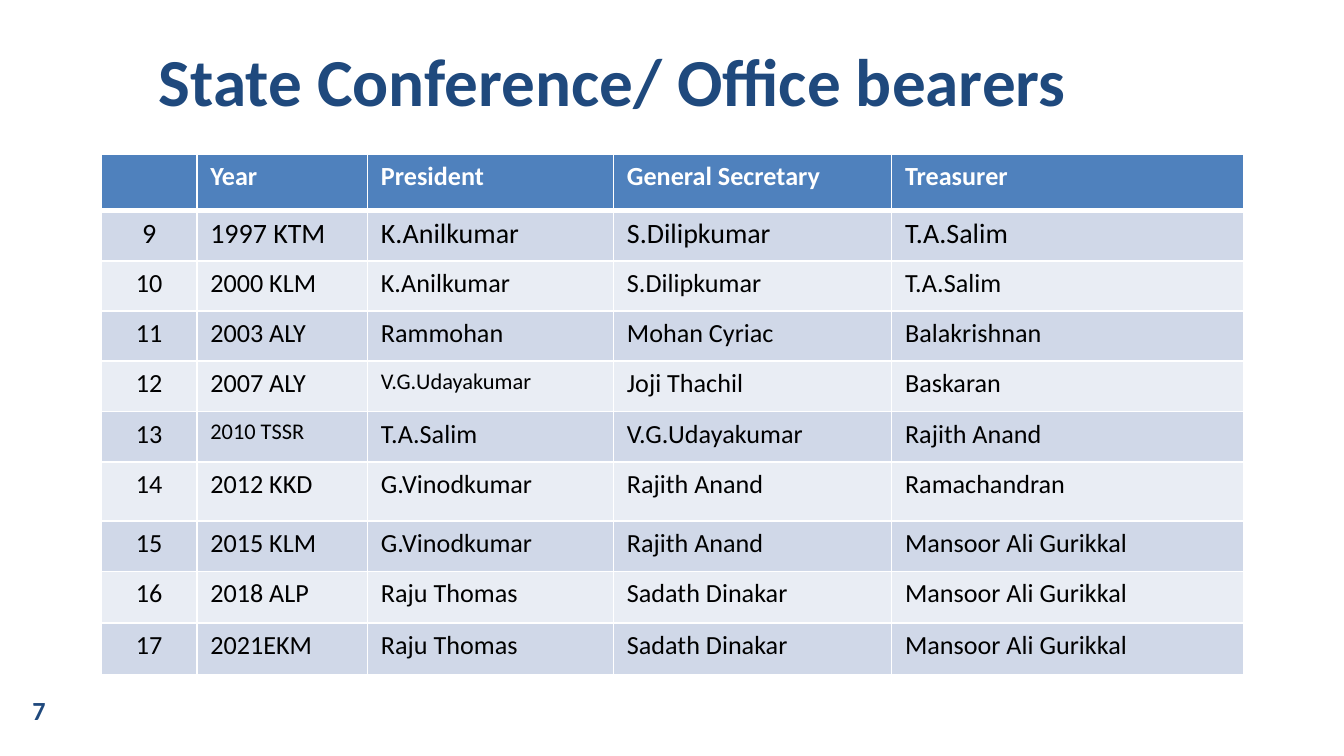
import pptx
import pptx.util
import pptx.dml.color
import pptx.enum.text
import pptx.oxml.ns
import lxml.etree

Pt = pptx.util.Pt
RGB = pptx.dml.color.RGBColor
ALIGN = pptx.enum.text.PP_ALIGN
MIDDLE = pptx.enum.text.MSO_ANCHOR.MIDDLE

NAVY = RGB(0x1F, 0x49, 0x7D)
BLUE = RGB(0x4F, 0x81, 0xBD)
BANDS = [RGB(0xD0, 0xD8, 0xE8), RGB(0xE9, 0xED, 0xF4)]
WHITE = RGB(0xFF, 0xFF, 0xFF)
BLACK = RGB(0, 0, 0)

TITLE = "State Conference/ Office bearers"
NUMBER = "7"
HEADS = ["", "Year", "President", "General Secretary", "Treasurer"]
FIRST = 9
TERMS = [
    ("1997 KTM", "K.Anilkumar", "S.Dilipkumar", "T.A.Salim"),
    ("2000 KLM", "K.Anilkumar", "S.Dilipkumar", "T.A.Salim"),
    ("2003 ALY", "Rammohan", "Mohan Cyriac", "Balakrishnan"),
    ("2007 ALY", "V.G.Udayakumar", "Joji Thachil", "Baskaran"),
    ("2010 TSSR", "T.A.Salim", "V.G.Udayakumar", "Rajith Anand"),
    ("2012 KKD", "G.Vinodkumar", "Rajith Anand", "Ramachandran"),
    ("2015 KLM", "G.Vinodkumar", "Rajith Anand", "Mansoor Ali Gurikkal"),
    ("2018 ALP", "Raju Thomas", "Sadath Dinakar", "Mansoor Ali Gurikkal"),
    ("2021EKM", "Raju Thomas", "Sadath Dinakar", "Mansoor Ali Gurikkal"),
]
SMALL = {(4, 2), (5, 1)}
WIDTHS = [51.1, 91.4, 131.8, 149, 188.7]
HEIGHTS = [30.2, 27.2, 26.8, 26.8, 27, 27, 31.6, 27, 27.8, 27.4]


def write(frame, text, size=14, color=BLACK, bold=False, align=ALIGN.LEFT):
    para = frame.paragraphs[0]
    para.alignment = align
    run = para.add_run()
    run.text = text
    run.font.name = "Calibri"
    run.font.size = Pt(size)
    run.font.bold = bold
    run.font.color.rgb = color


def add_box(slide, text, left, top, width, height, **style):
    box = slide.shapes.add_textbox(Pt(left), Pt(top), Pt(width), Pt(height))
    frame = box.text_frame
    frame.word_wrap = True
    frame.vertical_anchor = MIDDLE
    write(frame, text, color=NAVY, bold=True, **style)


def add_edges(cell, row):
    props = cell._tc.get_or_add_tcPr()
    thick = {"T": 3 if row == 1 else 1, "B": 3 if row == 0 else 1}
    for side in "LRTB":
        name = pptx.oxml.ns.qn("a:ln" + side)
        width = str(Pt(thick.get(side, 1)))
        line = lxml.etree.SubElement(props, name, w=width)
        fill = lxml.etree.SubElement(line, pptx.oxml.ns.qn("a:solidFill"))
        lxml.etree.SubElement(fill, pptx.oxml.ns.qn("a:srgbClr"), val=str(WHITE))


def add_grid(slide):
    rows = [HEADS] + [(str(n), *term) for n, term in enumerate(TERMS, FIRST)]
    grid = slide.shapes.add_table(
        len(rows), len(HEADS), Pt(54.4), Pt(82.6), Pt(sum(WIDTHS)), Pt(sum(HEIGHTS))
    ).table
    for col, width in zip(grid.columns, WIDTHS):
        col.width = Pt(width)
    for r, texts in enumerate(rows):
        grid.rows[r].height = Pt(HEIGHTS[r])
        for c, text in enumerate(texts):
            cell = grid.cell(r, c)
            add_edges(cell, r)
            cell.fill.solid()
            cell.fill.fore_color.rgb = BANDS[(r - 1) % 2] if r else BLUE
            if text:
                write(
                    cell.text_frame,
                    text,
                    size=12 if (r, c) in SMALL else 15 if r == 1 else 14,
                    color=BLACK if r else WHITE,
                    bold=r == 0,
                    align=ALIGN.LEFT if c else ALIGN.CENTER,
                )


def main():
    deck = pptx.Presentation()
    deck.slide_width, deck.slide_height = Pt(720), Pt(405)
    slide = deck.slides.add_slide(deck.slide_layouts[6])
    add_box(slide, NUMBER, 0, 369.4, 41.8, 22.3, align=ALIGN.CENTER)
    add_box(slide, TITLE, 78, 13.7, 642, 58.3, size=36)
    add_grid(slide)
    deck.save("out.pptx")


if __name__ == "__main__":
    main()
